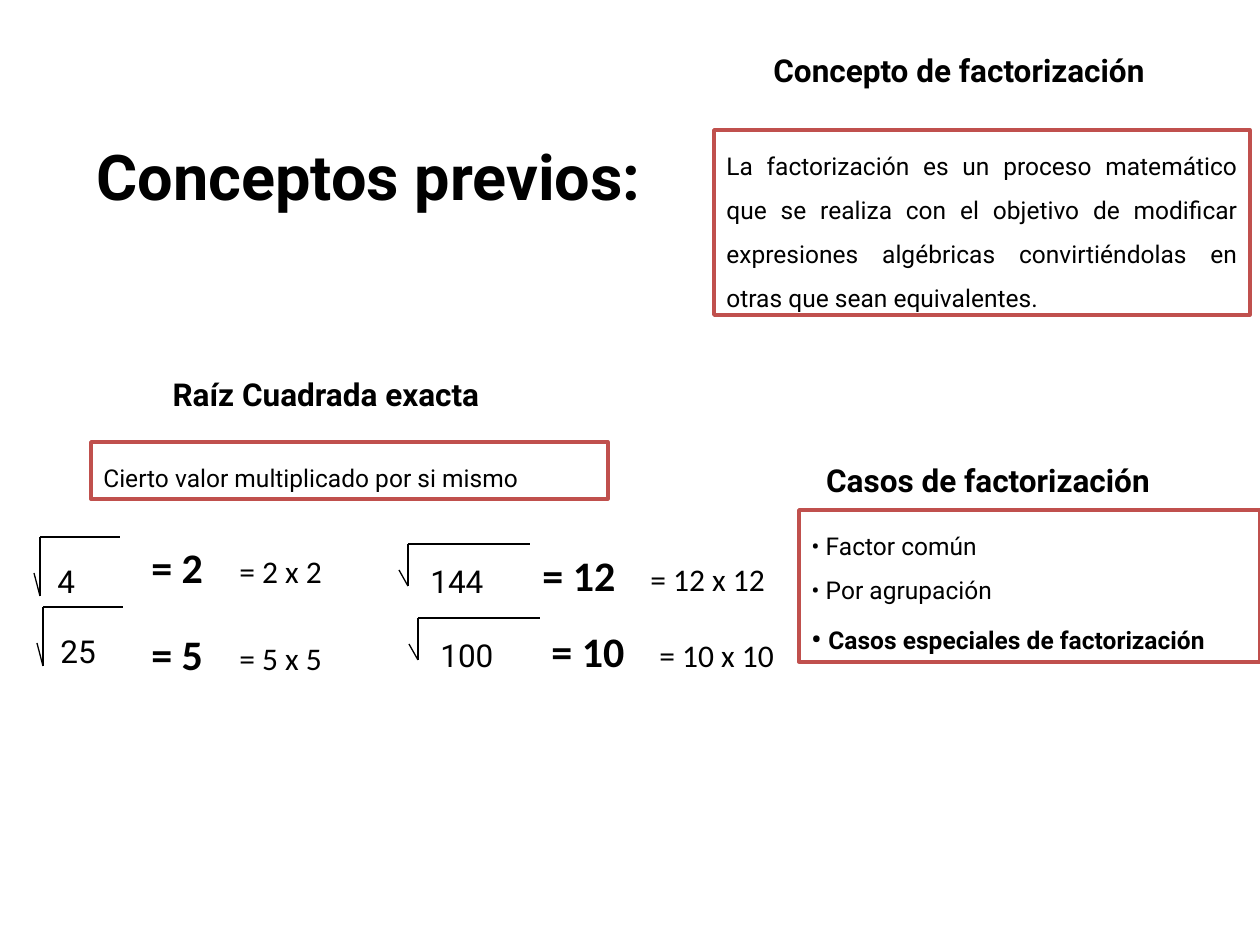
from dataclasses import dataclass
from itertools import pairwise

from lxml.etree import SubElement
from pptx import Presentation
from pptx.dml.color import RGBColor
from pptx.enum.shapes import MSO_CONNECTOR, MSO_SHAPE
from pptx.enum.text import MSO_ANCHOR, MSO_AUTO_SIZE, PP_ALIGN
from pptx.oxml.ns import qn
from pptx.util import Pt


@dataclass(frozen=True)
class Theme:
    ink: RGBColor = RGBColor(0x00, 0x00, 0x00)
    paper: RGBColor = RGBColor(0xFF, 0xFF, 0xFF)
    border: RGBColor = RGBColor(0xC0, 0x50, 0x4D)
    text_font: str = "Roboto"
    math_font: str = "Calibri"
    title: int = 36
    result: int = 24
    heading: int = 18
    bullet: int = 16
    body: int = 14


THEME = Theme()
PX = 914400 / 126

# Content: boxes are left, top, width, height in px
TITLE = ("Conceptos previos:", (84, 131, 590, 89))
HEADINGS = [
    ("Raíz Cuadrada exacta ", (121, 369, 418, 50), PP_ALIGN.CENTER),
    ("Casos de factorización", (753, 455, 470, 50), PP_ALIGN.CENTER),
    ("Concepto de factorización", (761, 45, 442, 50), PP_ALIGN.LEFT),
]
BODY, BOLD, BULLET = (THEME.body, False), (THEME.body, True), (THEME.bullet, True)
# Framed panels: box, alignment, paragraphs of (text, (size, bold)) runs
PANELS = [
    ((714, 130, 536, 185), PP_ALIGN.JUSTIFY, [
        [("La factorización es un proceso matemático que se realiza con el objetivo "
          "de modificar expresiones algébricas convirtiéndolas en otras que sean "
          "equivalentes.", BODY)]]),
    ((91, 442, 517, 57), PP_ALIGN.JUSTIFY, [
        [("Cierto valor multiplicado por si mismo", BODY)]]),
    ((799, 510, 461, 152), PP_ALIGN.LEFT, [
        [("• Factor común", BODY)],
        [("• Por agrupación", BODY)],
        [("• ", BULLET), ("Casos especiales de factorización", BOLD)]]),
]
# Radical sizes: tick width, tick drop, foot drop, bar width,
# number box offset and size, result box width, tab to the product
SMALL = dict(tick=6, tick_drop=36, foot_drop=59, bar=80,
             number=(5, 0, 72, 63), result_width=242, tab=88)
LARGE = dict(tick=9, tick_drop=26, foot_drop=42, bar=122,
             number=(10, -7, 111, 63), result_width=297, tab=108)
# Radicand, root, corner of the radical, corner of the result, size
ROOTS = [
    (4, 2, (40, 537), (139, 535), SMALL),
    (25, 5, (43, 607), (139, 622), SMALL),
    (144, 12, (408, 544), (530, 543), LARGE),
    (100, 10, (418, 618), (539, 619), LARGE),
]


def emu(*lengths):
    return [round(length * PX) for length in lengths]


def add_run(paragraph, text, size, bold=False, font=THEME.text_font):
    run = paragraph.add_run()
    run.text = text
    run.font.name = font
    run.font.size = Pt(size)
    run.font.bold = bold
    run.font.color.rgb = THEME.ink


def add_text_box(slide, box):
    frame = slide.shapes.add_textbox(*emu(*box)).text_frame
    frame.word_wrap = True
    frame.auto_size = MSO_AUTO_SIZE.SHAPE_TO_FIT_TEXT
    return frame.paragraphs[0]


def add_title(slide, text, box):
    title = slide.shapes.title
    title.left, title.top, title.width, title.height = emu(*box)
    frame = title.text_frame
    frame.word_wrap = False
    frame.auto_size = MSO_AUTO_SIZE.SHAPE_TO_FIT_TEXT
    frame.vertical_anchor = MSO_ANCHOR.TOP
    paragraph = frame.paragraphs[0]
    paragraph.alignment = PP_ALIGN.LEFT
    add_run(paragraph, text, THEME.title, True)


def add_panel(slide, box, alignment, paragraphs):
    panel = slide.shapes.add_shape(MSO_SHAPE.RECTANGLE, *emu(*box))
    panel.shadow.inherit = False
    panel.fill.solid()
    panel.fill.fore_color.rgb = THEME.paper
    panel.line.color.rgb = THEME.border
    panel.line.width = Pt(2)
    frame = panel.text_frame
    frame.word_wrap = True
    frame.auto_size = MSO_AUTO_SIZE.SHAPE_TO_FIT_TEXT
    frame.vertical_anchor = MSO_ANCHOR.TOP
    for index, runs in enumerate(paragraphs):
        paragraph = frame.add_paragraph() if index else frame.paragraphs[0]
        paragraph.alignment = alignment
        paragraph.line_spacing = 1.5
        for text, (size, bold) in runs:
            add_run(paragraph, text, size, bold)


def add_line(slide, start, end):
    line = slide.shapes.add_connector(MSO_CONNECTOR.STRAIGHT, *emu(*start, *end))
    line.line.color.rgb = THEME.ink
    line.line.width = Pt(0.75)
    SubElement(line._element.spPr, qn("a:effectLst"))


def add_root(slide, radicand, root, corner, result_corner, size):
    # Radical sign
    x, y = corner
    points = [(x - size["tick"], y + size["tick_drop"]),
              (x, y + size["foot_drop"]), corner, (x + size["bar"], y)]
    for start, end in pairwise(points):
        add_line(slide, start, end)

    # Number under the bar
    dx, dy, width, height = size["number"]
    number = add_text_box(slide, (x + dx, y + dy, width, height))
    number.alignment = PP_ALIGN.JUSTIFY
    number.line_spacing = 1.5
    add_run(number, str(radicand), THEME.heading)

    # Root and its product, set apart by a tab stop
    result = add_text_box(slide, (*result_corner, size["result_width"], 63))
    tabs = SubElement(result._p.get_or_add_pPr(), qn("a:tabLst"))
    SubElement(tabs, qn("a:tab"), pos=str(emu(size["tab"])[0]), algn="l")
    add_run(result, f"= {root}\t", THEME.result, True, THEME.math_font)
    add_run(result, f"= {root} x {root}", THEME.heading, False, THEME.math_font)


def main():
    presentation = Presentation()
    presentation.slide_width, presentation.slide_height = emu(1260, 945)
    slide = presentation.slides.add_slide(presentation.slide_layouts[5])

    add_title(slide, *TITLE)
    for panel in PANELS:
        add_panel(slide, *panel)
    for text, box, alignment in HEADINGS:
        heading = add_text_box(slide, box)
        heading.alignment = alignment
        add_run(heading, text, THEME.heading, True)
    for root in ROOTS:
        add_root(slide, *root)

    presentation.save("out.pptx")


if __name__ == "__main__":
    main()
